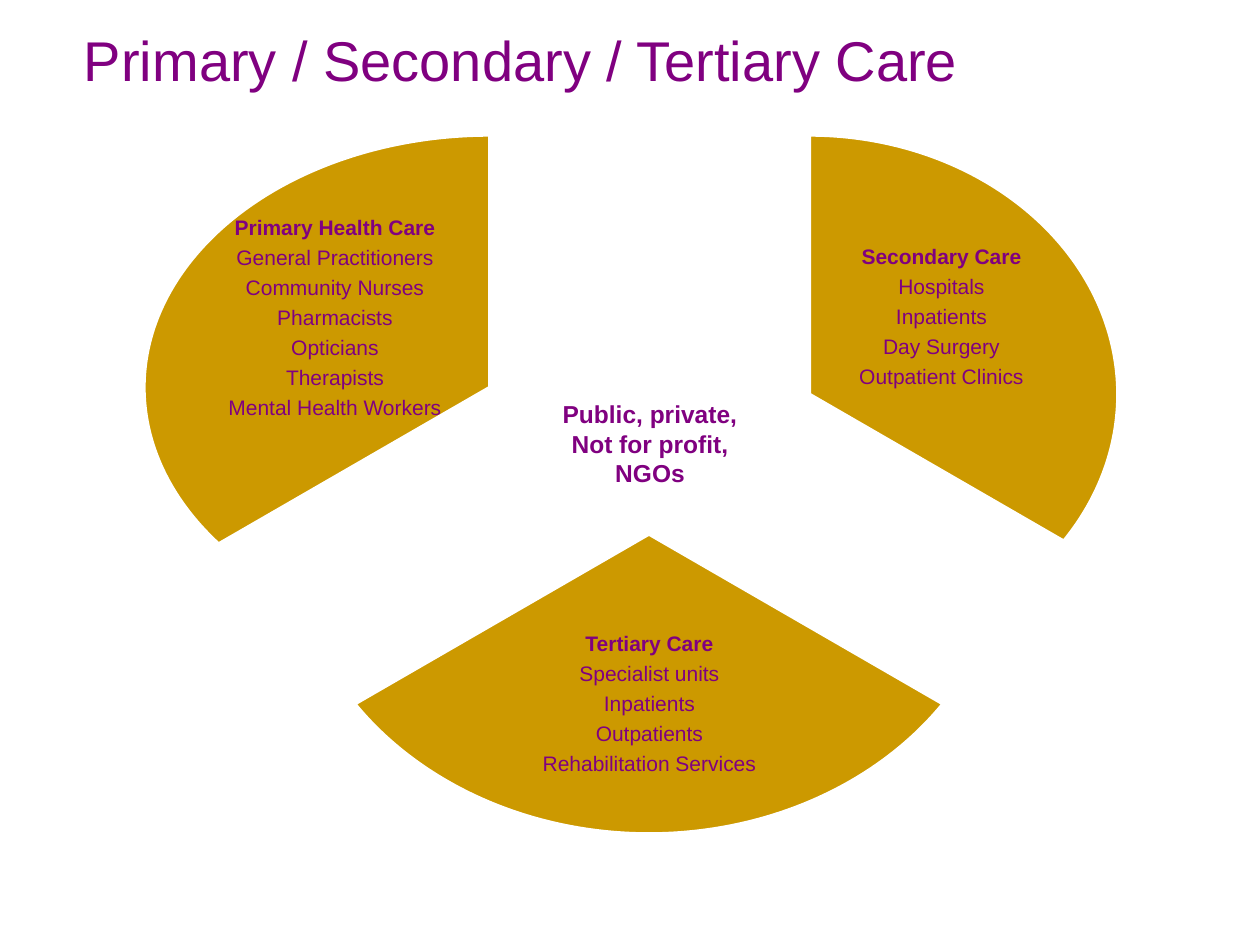
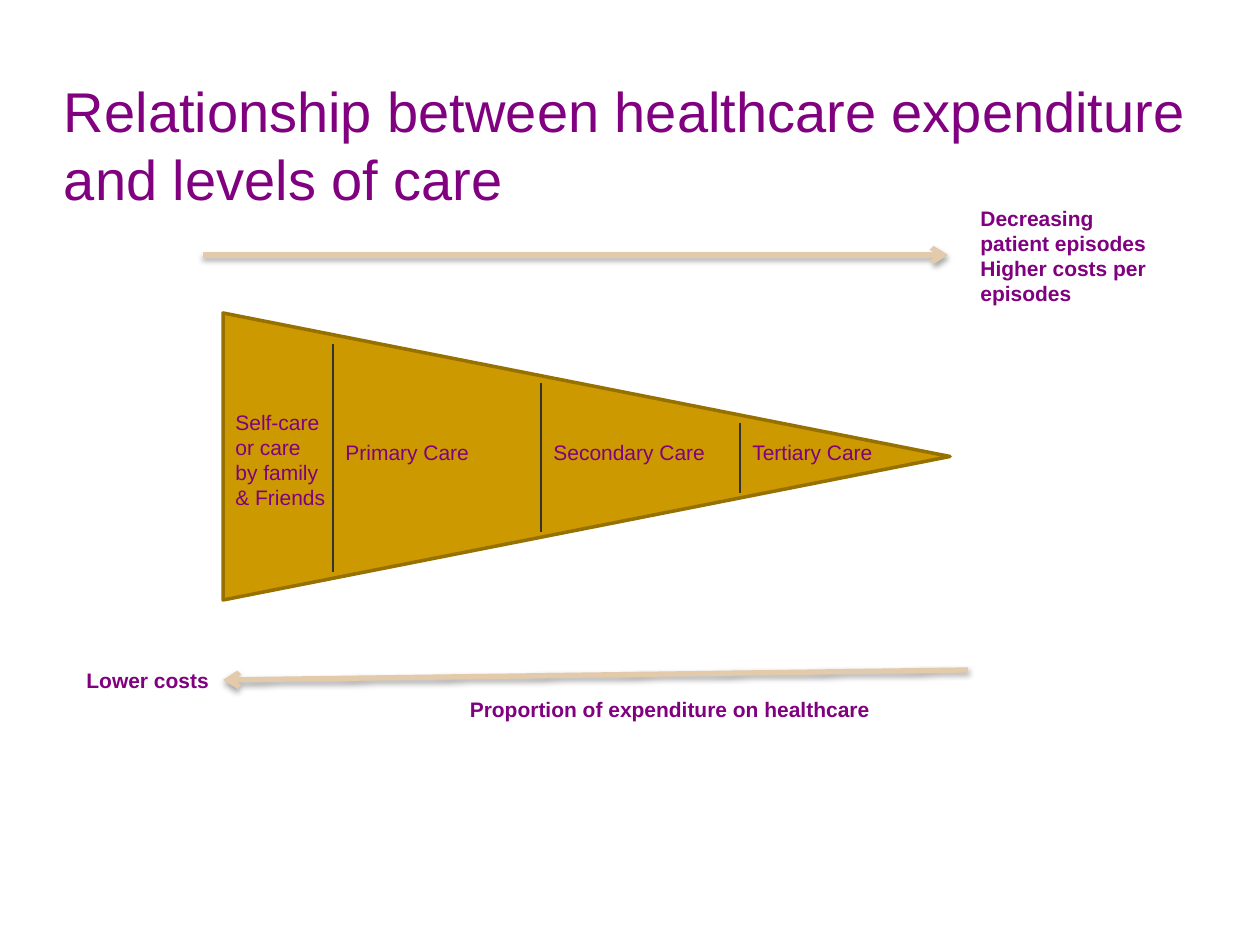
import pptx
import pptx.dml.color
import pptx.enum.shapes
import pptx.enum.text
import pptx.oxml
import pptx.oxml.ns
import pptx.util

PX_PER_INCH = 126
FONT = "Arial"
PURPLE = pptx.dml.color.RGBColor(0x80, 0x00, 0x80)
GOLD = pptx.dml.color.RGBColor(0xCC, 0x99, 0x00)
DARK_GOLD = pptx.dml.color.RGBColor(0x97, 0x71, 0x00)
SAND = pptx.dml.color.RGBColor(0xE2, 0xCA, 0xAA)
CHARCOAL = pptx.dml.color.RGBColor(0x33, 0x33, 0x33)
WHITE = pptx.dml.color.RGBColor(0xFF, 0xFF, 0xFF)

SHAPES = pptx.enum.shapes.MSO_SHAPE
ALIGN = pptx.enum.text.PP_ALIGN
ANCHOR = pptx.enum.text.MSO_ANCHOR
NAMESPACE = pptx.oxml.ns.nsdecls("a")
NO_EFFECT = f"<a:effectLst {NAMESPACE}/>"
SOFT_SHADOW = (
    f'<a:effectLst {NAMESPACE}><a:outerShdw blurRad="40000" dist="23000" dir="5400000" '
    'rotWithShape="0"><a:srgbClr val="000000"><a:alpha val="35000"/></a:srgbClr>'
    "</a:outerShdw></a:effectLst>"
)
ARROWHEAD = f'<a:tailEnd {NAMESPACE} type="arrow"/>'

# Sector start and end in degrees, pie box, text box, heading and services
SECTORS = [
    (270, 30, (357, 0, 617, 519), (693, 96, 209, 173),
     ["Secondary Care", "Hospitals", "Inpatients", "Day Surgery", "Outpatient Clinics"]),
    (30, 150, (148, 99, 714, 600), (344, 477, 323, 185),
     ["Tertiary Care", "Specialist units", "Inpatients", "Outpatients",
      "Rehabilitation Services"]),
    (150, 270, (0, 0, 692, 505), (74, 99, 234, 169),
     ["Primary Health Care", "General Practitioners", "Community Nurses", "Pharmacists",
      "Opticians", "Therapists", "Mental Health Workers"]),
]

# Divider x, top and bottom, and the level of care to its right
LEVELS = [
    (110, 31, 259, "Primary Care"),
    (318, 70, 219, "Secondary Care"),
    (517, 110, 180, "Tertiary Care"),
]


def px(*lengths):
    return [pptx.util.Emu(round(length * 914400 / PX_PER_INCH)) for length in lengths]


def shifted(box, left, top):
    return box[0] + left, box[1] + top, *box[2:]


def style_paragraph(paragraph, size, bold=False, align=ALIGN.LEFT):
    paragraph.alignment = align
    paragraph.font.name = FONT
    paragraph.font.size = pptx.util.Pt(size)
    paragraph.font.bold = bold
    paragraph.font.color.rgb = PURPLE


def set_insets(frame, inset):
    frame.margin_left = frame.margin_right = inset
    frame.margin_top = frame.margin_bottom = inset


def add_titled_slide(presentation, title, left, top):
    slide = presentation.slides.add_slide(presentation.slide_layouts[5])
    shape = slide.shapes.title
    shape.left, shape.top, shape.width, shape.height = px(left, top, 1131, 137)
    frame = shape.text_frame
    frame.text = title
    frame.auto_size = pptx.enum.text.MSO_AUTO_SIZE.NONE
    frame.vertical_anchor = ANCHOR.TOP
    set_insets(frame, 0)
    style_paragraph(frame.paragraphs[0], 32)
    return slide


def add_text(slide, box, lines, size=12, bold=False, align=ALIGN.LEFT):
    frame = slide.shapes.add_textbox(*px(*box)).text_frame
    frame.word_wrap = True
    frame.text = "\n".join(lines)
    for paragraph in frame.paragraphs:
        style_paragraph(paragraph, size, bold, align)
    return frame


def add_filled_shape(slide, kind, box, line_color):
    shape = slide.shapes.add_shape(kind, *px(*box))
    shape.shadow.inherit = False
    shape.fill.solid()
    shape.fill.fore_color.rgb = GOLD
    shape.line.color.rgb = line_color
    shape.line.width = pptx.util.Pt(2)
    return shape


def add_line(slide, start, end, color, width, effect=NO_EFFECT):
    connector = slide.shapes.add_connector(
        pptx.enum.shapes.MSO_CONNECTOR.STRAIGHT, *px(*start, *end))
    connector.line.color.rgb = color
    connector.line.width = pptx.util.Pt(width)
    connector._element.spPr.append(pptx.oxml.parse_xml(effect))
    return connector


def add_arrow(slide, start, end):
    connector = add_line(slide, start, end, SAND, 3, SOFT_SHADOW)
    connector.line._get_or_add_ln().append(pptx.oxml.parse_xml(ARROWHEAD))


def add_care_wheel(slide, left, top):
    """Three sectors of care around a caption."""
    for start, end, pie_box, text_box, lines in SECTORS:
        pie = add_filled_shape(slide, SHAPES.PIE, shifted(pie_box, left, top), WHITE)
        for index, degrees in enumerate((start, end)):
            pie.adjustments[index] = degrees * 0.6  # 60000 units a degree, in 100000ths
        frame = add_text(slide, shifted(text_box, left, top), lines, align=ALIGN.CENTER)
        frame.vertical_anchor = ANCHOR.MIDDLE
        set_insets(frame, pptx.util.Inches(0.02))
        frame.paragraphs[0].font.bold = True
        for paragraph in frame.paragraphs:
            paragraph.line_spacing = 0.9
            paragraph.space_after = pptx.util.Pt(4.2)
    add_text(slide, shifted((397, 258, 218, 102), left, top),
             ["Public, private, Not for profit, NGOs"], 14, True, ALIGN.CENTER)


def add_care_triangle(slide, left, top, width, height):
    """Triangle pointing right, divided into levels of care."""
    inset = (width - height) / 2
    triangle = add_filled_shape(
        slide, SHAPES.ISOSCELES_TRIANGLE,
        (left + inset, top - inset, height, width), DARK_GOLD)
    triangle.rotation = 90
    add_text(slide, (left, top + 90, 118, 115), ["Self-care or care by family & Friends"])
    for x, line_top, line_bottom, level in LEVELS:
        add_line(slide, (left + x, top + line_top), (left + x, top + line_bottom),
                 CHARCOAL, 0.75)
        add_text(slide, (left + x, top + 120, 198, 38), [level])


def add_cost_arrows(slide, left, top):
    """Arrows above and below the triangle, with their captions."""
    add_arrow(slide, (left + 129, top + 56), (left + 874, top + 56))
    add_arrow(slide, (left + 894, top + 471), (left + 149, top + 481))
    add_text(slide, (left + 894, top, 198, 115),
             ["Decreasing patient episodes", "Higher costs per episodes"], bold=True)
    add_text(slide, (left, top + 462, 169, 38), ["Lower costs"], bold=True)
    add_text(slide, (left + 318, top + 491, 556, 38),
             ["Proportion of expenditure on healthcare"], bold=True, align=ALIGN.CENTER)


def main():
    presentation = pptx.Presentation()
    presentation.slide_width, presentation.slide_height = px(1260, 945)

    slide = add_titled_slide(presentation, "Primary / Secondary / Tertiary Care", 84, 26)
    add_care_wheel(slide, 144, 135)

    slide = add_titled_slide(
        presentation, "Relationship between healthcare expenditure and levels of care", 64, 77)
    add_care_triangle(slide, 223, 313, 727, 287)
    add_cost_arrows(slide, 74, 199)

    presentation.save("out.pptx")


if __name__ == "__main__":
    main()
